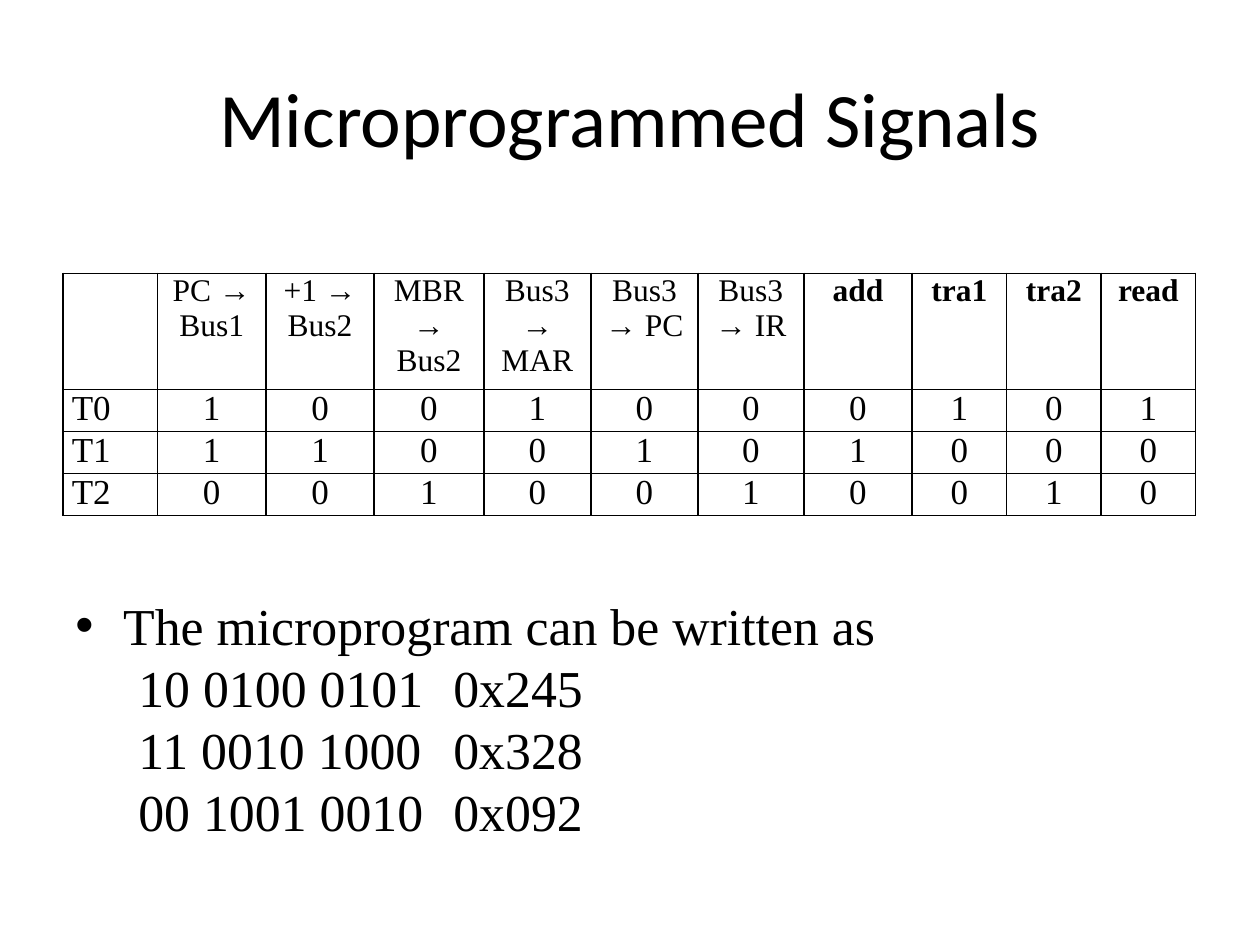
from pptx import Presentation
from pptx.dml.color import RGBColor
from pptx.enum.text import MSO_ANCHOR, PP_ALIGN
from pptx.oxml import parse_xml
from pptx.oxml.ns import nsdecls
from pptx.util import Inches, Pt

CENTER, LEFT = PP_ALIGN.CENTER, PP_ALIGN.LEFT
MIDDLE, BOTTOM = MSO_ANCHOR.MIDDLE, MSO_ANCHOR.BOTTOM
BLACK = RGBColor(0, 0, 0)
SERIF = "Times New Roman"

TITLE = "Microprogrammed Signals"
SIGNALS = ["", "PC → Bus1", "+1 → Bus2", "MBR → Bus2", "Bus3 → MAR",
           "Bus3 → PC", "Bus3 → IR", "add", "tra1", "tra2", "read"]
FIRST_BOLD = SIGNALS.index("add")
STEPS = [("T0", "1001000101"), ("T1", "1100101000"), ("T2", "0010010010")]
COL_WIDTHS = [0.75, 0.86, 0.86, 0.87, 0.85, 0.85, 0.84, 0.86, 0.75, 0.75, 0.75]
ROW_HEIGHTS = [0.92, 0.33, 0.33, 0.33]
MICROPROGRAM = ["The microprogram can be written as", "\t10 0100 0101\t0x245",
                "\t11 0010 1000\t0x328", "\t00 1001 0010\t0x092"]


def add_run(p, text, size, font=SERIF, bold=False):
    r = p.add_run()
    r.text = text
    r.font.name, r.font.size, r.font.bold = font, Pt(size), bold
    r.font.color.rgb = BLACK


def add_text_frame(s, left, top, width, height, anchor):
    tf = s.shapes.add_textbox(*map(Inches, (left, top, width, height))).text_frame
    tf.word_wrap = True
    tf.vertical_anchor = anchor
    return tf


def add_borders(cell):
    tcPr = cell._tc.get_or_add_tcPr()
    for i, side in enumerate(("lnL", "lnR", "lnT", "lnB")):
        tcPr.insert(i, parse_xml(
            f'<a:{side} {nsdecls("a")} w="12700"><a:solidFill>'
            f'<a:srgbClr val="{BLACK}"/></a:solidFill></a:{side}>'))


def add_signal_table(s):
    rows = [SIGNALS] + [[step, *bits] for step, bits in STEPS]
    table = s.shapes.add_table(
        len(rows), len(SIGNALS), Inches(0.5), Inches(2.17),
        Inches(sum(COL_WIDTHS)), Inches(sum(ROW_HEIGHTS))).table
    table.first_row = table.horz_banding = False
    for col, width in zip(table.columns, COL_WIDTHS):
        col.width = Inches(width)
    for row, height in zip(table.rows, ROW_HEIGHTS):
        row.height = Inches(height)
    for i, row in enumerate(rows):
        for j, text in enumerate(row):
            cell = table.cell(i, j)
            cell.margin_left = cell.margin_right = Inches(0.07)
            cell.margin_top = cell.margin_bottom = 0
            cell.fill.background()
            add_borders(cell)
            p = cell.text_frame.paragraphs[0]
            p.alignment = CENTER if j else LEFT
            p.space_after = Pt(12)
            if text:
                add_run(p, text, 20 if i else 18, bold=i == 0 and j >= FIRST_BOLD)


def add_bullet(p, indent):
    pPr = p._p.get_or_add_pPr()
    pPr.set("marL", str(indent))
    pPr.set("indent", str(-indent))
    pPr.append(parse_xml(f'<a:buFont {nsdecls("a")} typeface="Arial"/>'))
    pPr.append(parse_xml(f'<a:buChar {nsdecls("a")} char="•"/>'))


prs = Presentation()
prs.slide_width, prs.slide_height = Inches(10), Inches(7.5)
s = prs.slides.add_slide(prs.slide_layouts[6])

p = add_text_frame(s, 0.5, 0.3, 9, 1.25, MIDDLE).paragraphs[0]
p.alignment = CENTER
add_run(p, TITLE, 44, "Calibri")

tf = add_text_frame(s, 0.5, 1.75, 9, 4.95, BOTTOM)
tf.margin_bottom = Inches(0.02)
p = tf.paragraphs[0]
p.line_spacing = Pt(35.4)
add_bullet(p, Inches(0.38))
for i, line in enumerate(MICROPROGRAM):
    if i:
        p.add_line_break()
    add_run(p, line, 29.6)

add_signal_table(s)
prs.save("out.pptx")
